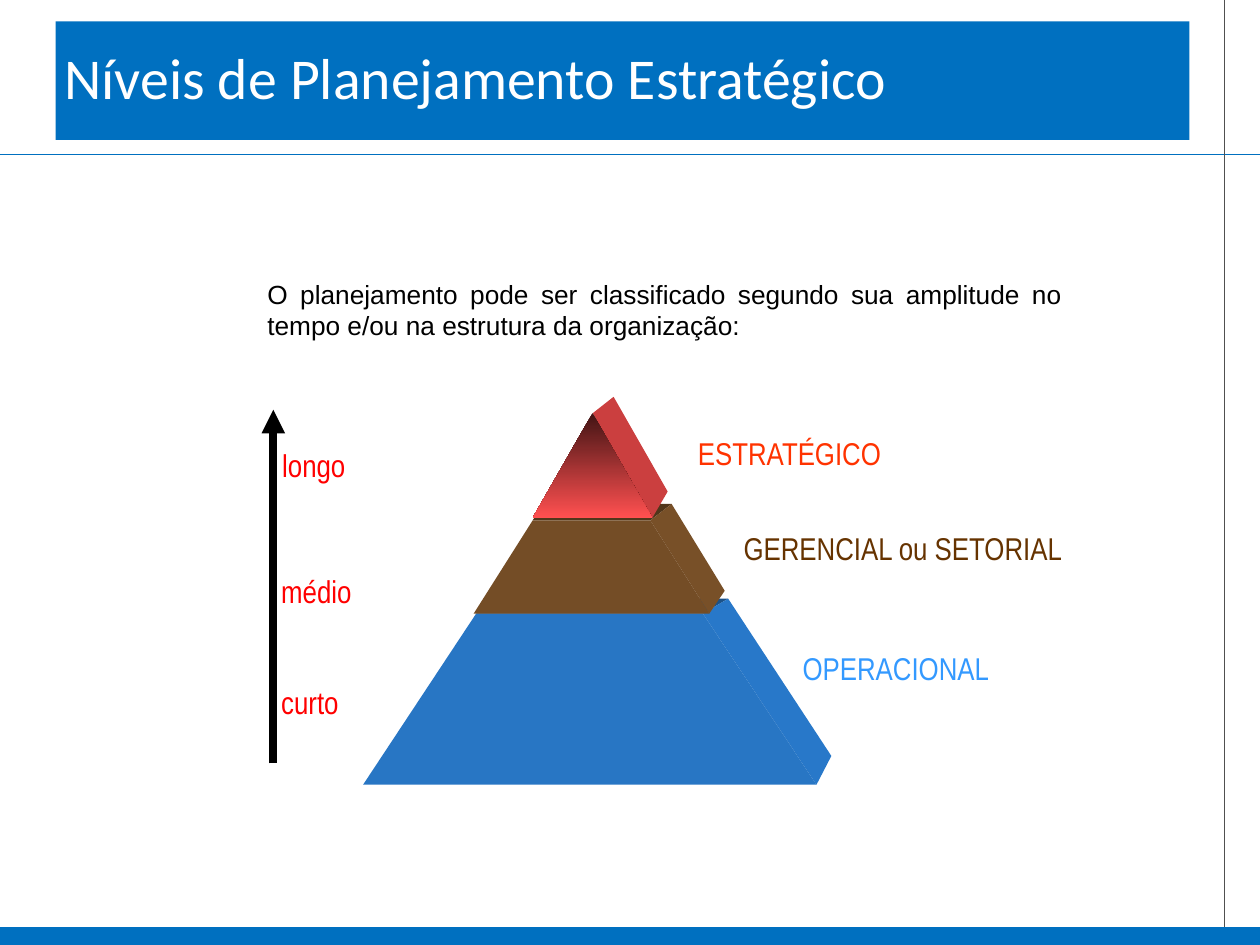
from typing import NamedTuple

from lxml.etree import SubElement
from pptx import Presentation
from pptx.dml.color import RGBColor
from pptx.enum.shapes import MSO_CONNECTOR, MSO_SHAPE
from pptx.enum.text import MSO_ANCHOR, PP_ALIGN
from pptx.oxml.ns import qn
from pptx.util import Cm, Pt

BLUE = RGBColor(0x00, 0x70, 0xC0)
WHITE = RGBColor(0xFF, 0xFF, 0xFF)
BLACK = RGBColor(0x00, 0x00, 0x00)
GREY = RGBColor(0x50, 0x50, 0x50)
RED = RGBColor(0xFF, 0x00, 0x00)
ORANGE = RGBColor(0xFF, 0x33, 0x00)
BROWN = RGBColor(0x66, 0x33, 0x00)
SKY = RGBColor(0x33, 0x99, 0xFF)
BASE_FRONT = RGBColor(0x28, 0x76, 0xC4)
BASE_SIDE = RGBColor(0x28, 0x78, 0xC9)
BASE_TOP = RGBColor(0x1C, 0x52, 0x88)
MID_FRONT = RGBColor(0x74, 0x4D, 0x26)
MID_SIDE = RGBColor(0x78, 0x50, 0x28)
MID_TOP = RGBColor(0x50, 0x36, 0x1B)
TIP_SIDE = RGBColor(0xCB, 0x3F, 0x3F)
TIP_DARK = RGBColor(0x42, 0x14, 0x14)
TIP_LIGHT = RGBColor(0xFF, 0x50, 0x50)

Point = tuple[float, float]


class Label(NamedTuple):
    text: str
    left: float
    top: float
    width: float
    color: RGBColor
    before: float = 0


class Face(NamedTuple):
    color: RGBColor
    points: list[Point]


LABELS = [
    Label("ESTRATÉGICO", 13.89, 8.64, 5.69, ORANGE, 11.2),
    Label("GERENCIAL ou SETORIAL", 14.81, 10.57, 7.06, BROWN),
    Label("OPERACIONAL", 16, 12.98, 5.23, SKY),
    Label("longo", 5.51, 8.89, 2.06, RED, 11.2),
    Label("médio", 5.49, 11.43, 2.06, RED, 11.2),
    Label("curto", 5.49, 13.67, 2.06, RED, 11.2),
]

FACES = [
    Face(BASE_TOP, [(9.6, 12.37), (14.17, 12.37), (14.68, 12.07), (9.9, 12.07)]),
    Face(BASE_SIDE, [(16.46, 15.82), (16.76, 15.24), (14.68, 12.07), (14.17, 12.37)]),
    Face(BASE_FRONT, [(7.32, 15.82), (16.46, 15.82), (14.17, 12.37), (9.6, 12.37)]),
    Face(MID_TOP, [(10.74, 10.49), (13.11, 10.49), (13.54, 10.16), (10.95, 10.16)]),
    Face(MID_SIDE, [(14.3, 12.37), (14.61, 11.91), (13.54, 10.16), (13.11, 10.49)]),
    Face(MID_FRONT, [(9.55, 12.37), (14.3, 12.37), (13.11, 10.49), (10.74, 10.49)]),
    Face(TIP_SIDE, [(11.95, 8.33), (12.37, 8), (13.46, 9.91), (13.15, 10.44)]),
]


def add_line(shapes, start: Point, end: Point, color: RGBColor, width: float):
    line = shapes.add_connector(MSO_CONNECTOR.STRAIGHT, *map(Cm, start + end))
    line.line.color.rgb = color
    line.line.width = Pt(width)
    SubElement(line._element.spPr, qn("a:effectLst"))
    return line


def add_shape(shapes, kind: MSO_SHAPE, box: tuple[float, ...]):
    shape = shapes.add_shape(kind, *map(Cm, box))
    shape.shadow.inherit = False
    shape.line.fill.background()
    return shape


def add_face(shapes, face: Face) -> None:
    start, *rest = [(Cm(x), Cm(y)) for x, y in face.points]
    pen = shapes.build_freeform(*start)
    pen.add_line_segments(rest)
    shape = pen.convert_to_shape()
    shape.shadow.inherit = False
    shape.fill.solid()
    shape.fill.fore_color.rgb = face.color
    shape.line.fill.background()


def set_text(shape, text: str, font: str, size: float, color: RGBColor, align=PP_ALIGN.LEFT):
    """Fill the shape with one formatted paragraph and return it."""
    frame = shape.text_frame
    frame.word_wrap = True
    frame.margin_left = frame.margin_right = Cm(0.18)
    frame.margin_top = frame.margin_bottom = Cm(0.1)
    frame.text = text
    para = frame.paragraphs[0]
    para.alignment = align
    for run in para.runs:
        run.font.name = font
        run.font.size = Pt(size)
        run.font.color.rgb = color
    return para


def add_label(shapes, label: Label) -> None:
    box = shapes.add_textbox(Cm(label.left), Cm(label.top), Cm(label.width), Cm(0.97))
    para = set_text(box, label.text, "Arial Narrow", 18, label.color)
    if label.before:
        para.space_before = Pt(label.before)


def add_tip(shapes) -> None:
    tip = add_shape(shapes, MSO_SHAPE.ISOSCELES_TRIANGLE, (10.74, 8.33, 2.41, 2.11))
    tip.fill.gradient()
    tip.fill.gradient_angle = 270
    for stop, color in zip(tip.fill.gradient_stops, (TIP_DARK, TIP_LIGHT)):
        stop.color.rgb = color


def add_frame(shapes) -> None:
    """Draw the rules and the bar at the slide's edges."""
    add_line(shapes, (0, 3.12), (25.4, 3.12), BLUE, 0.75)
    add_line(shapes, (24.69, 0), (24.69, 19.05), GREY, 0.75)
    bar = add_shape(shapes, MSO_SHAPE.RECTANGLE, (0, 18.72, 25.4, 0.33))
    bar.fill.solid()
    bar.fill.fore_color.rgb = BLUE
    bar.line.color.rgb = BLUE
    bar.line.width = Pt(2)


def add_title(shapes) -> None:
    title = add_shape(shapes, MSO_SHAPE.RECTANGLE, (1.12, 0.43, 22.86, 2.39))
    title.fill.solid()
    title.fill.fore_color.rgb = BLUE
    title.text_frame.vertical_anchor = MSO_ANCHOR.MIDDLE
    para = set_text(title, "Níveis de Planejamento Estratégico", "Calibri", 33, WHITE)
    para.line_spacing = 0.9


def main() -> None:
    deck = Presentation()
    deck.slide_width, deck.slide_height = Cm(25.4), Cm(19.05)
    shapes = deck.slides.add_slide(deck.slide_layouts[6]).shapes

    add_frame(shapes)
    intro = shapes.add_textbox(Cm(5.21), Cm(5.51), Cm(16.38), Cm(1.47))
    set_text(
        intro,
        "O planejamento pode ser classificado segundo sua amplitude no tempo "
        "e/ou na estrutura da organização:",
        "Arial", 15, BLACK, PP_ALIGN.JUSTIFY,
    )
    arrow = add_line(shapes, (5.51, 15.39), (5.51, 8.26), BLACK, 4.5)
    SubElement(arrow.line._get_or_add_ln(), qn("a:tailEnd"), type="triangle")
    for label in LABELS:
        add_label(shapes, label)
    for face in FACES:
        add_face(shapes, face)
    add_tip(shapes)
    add_title(shapes)
    deck.save("out.pptx")


if __name__ == "__main__":
    main()
